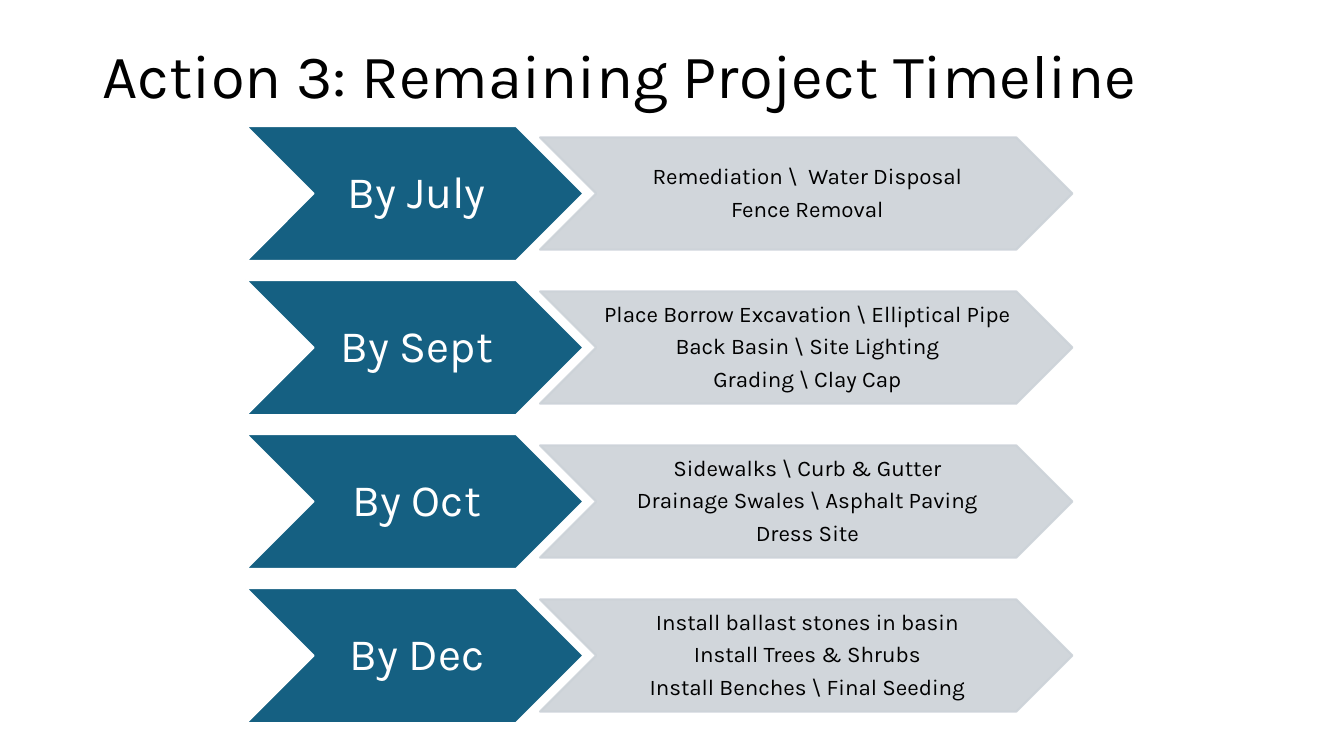
import pptx
import pptx.util
import pptx.dml.color
import pptx.enum.shapes
import pptx.enum.text
import pptx.oxml.ns
import lxml.etree

Pt = pptx.util.Pt
ALIGN = pptx.enum.text.PP_ALIGN
ANCHOR = pptx.enum.text.MSO_ANCHOR

STEPS = [
    ("By July", ["Remediation \\  Water Disposal", "Fence Removal"]),
    ("By Sept", ["Place Borrow Excavation \\ Elliptical Pipe",
                 "Back Basin \\ Site Lighting", "Grading \\ Clay Cap"]),
    ("By Oct", ["Sidewalks \\ Curb & Gutter",
                "Drainage Swales \\ Asphalt Paving", "Dress Site"]),
    ("By Dec", ["Install ballast stones in basin", "Install Trees & Shrubs",
                "Install Benches \\ Final Seeding"]),
]


def fade(props, alpha):
    """Make a shape's solid fill and line partly transparent (alpha in percent)."""
    for node in props.iter(pptx.oxml.ns.qn("a:srgbClr")):
        mark = lxml.etree.SubElement(node, pptx.oxml.ns.qn("a:alpha"))
        mark.set("val", str(alpha * 1000))


class Deck:
    font = "Karla"
    colors = {"ink": "000000", "white": "FFFFFF", "teal": "156082", "gray": "CCD2D8"}

    def __init__(self, width, height):
        self.file = pptx.Presentation()
        self.file.slide_width = Pt(width)
        self.file.slide_height = Pt(height)
        self.slide = self.file.slides.add_slide(self.file.slide_layouts[5])

    def color(self, name):
        return pptx.dml.color.RGBColor.from_string(self.colors[name])

    def label(self, frame, lines, size, ink="ink", align=ALIGN.CENTER,
              anchor=ANCHOR.MIDDLE, after=0):
        frame.word_wrap = True
        frame.auto_size = pptx.enum.text.MSO_AUTO_SIZE.NONE
        frame.vertical_anchor = anchor
        for i, line in enumerate(lines):
            para = frame.paragraphs[0] if i == 0 else frame.add_paragraph()
            para.text = line
            para.alignment = align
            para.line_spacing = 0.9
            para.space_after = Pt(after)
            para.font.name = self.font
            para.font.size = Pt(size)
            para.font.color.rgb = self.color(ink)

    def title(self, text, left, top, width, height):
        box = self.slide.shapes.title
        box.left, box.top, box.width, box.height = map(Pt, (left, top, width, height))
        self.label(box.text_frame, [text], 44, align=ALIGN.LEFT, anchor=ANCHOR.TOP)

    def arrow(self, box, lines, size, fill, edge, ink, pad, alpha=100):
        """Draw a chevron; box is left, top, width, height and pad is left, top."""
        shape = self.slide.shapes.add_shape(
            pptx.enum.shapes.MSO_SHAPE.CHEVRON, *map(Pt, box))
        shape.shadow.inherit = False
        shape.fill.solid()
        shape.fill.fore_color.rgb = self.color(fill)
        shape.line.color.rgb = self.color(edge)
        shape.line.width = Pt(1.5)
        if alpha < 100:
            fade(shape._element.spPr, alpha)
        frame = shape.text_frame
        frame.margin_left, frame.margin_right = Pt(pad[0]), 0
        frame.margin_top = frame.margin_bottom = Pt(pad[1])
        self.label(frame, lines, size, ink, after=6)


def main():
    deck = Deck(960, 540)
    deck.title("Action 3: Remaining Project Timeline", 66, 28.75, 828, 104.4)
    for row, (date, tasks) in enumerate(STEPS):
        top = 90 + 110 * row
        deck.arrow((175.7, top, 241.2, 96.5), [date], 32,
                   "teal", "white", "white", (3, 1.5))
        deck.arrow((385.8, top + 8.2, 380.3, 80.1), tasks, 16,
                   "gray", "gray", "ink", (1.5, 0.75), alpha=90)
    deck.file.save("out.pptx")


if __name__ == "__main__":
    main()
